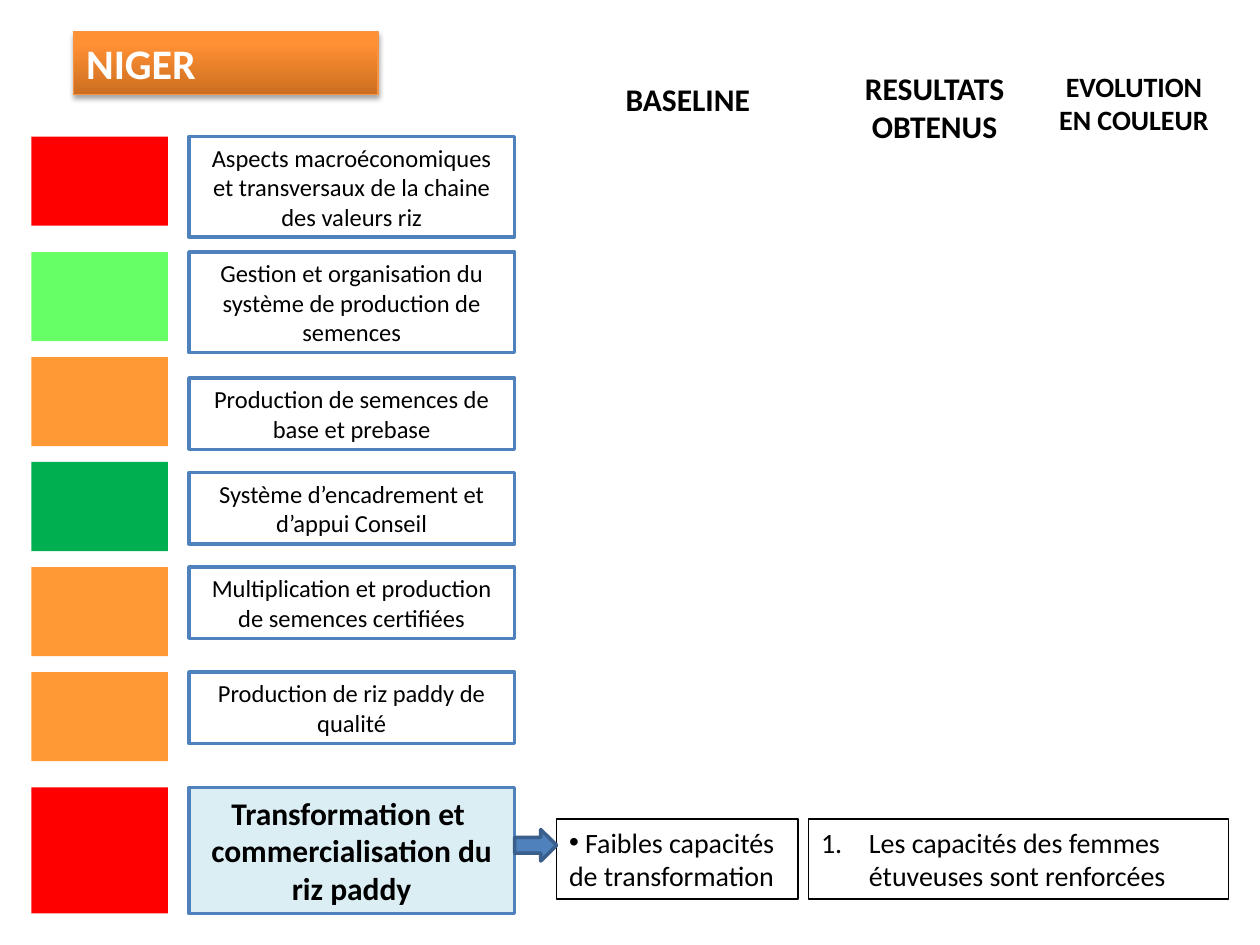
from collections import namedtuple
from dataclasses import dataclass

from lxml import etree
from pptx import Presentation
from pptx.dml.color import RGBColor
from pptx.enum.shapes import MSO_SHAPE
from pptx.enum.text import MSO_ANCHOR, MSO_AUTO_SIZE, PP_ALIGN
from pptx.oxml import parse_xml
from pptx.oxml.ns import nsdecls, qn
from pptx.util import Inches, Pt

RECT, ARROW = MSO_SHAPE.RECTANGLE, MSO_SHAPE.RIGHT_ARROW
LEFT, CENTER = PP_ALIGN.LEFT, PP_ALIGN.CENTER
TOP, MIDDLE = MSO_ANCHOR.TOP, MSO_ANCHOR.MIDDLE
NO_FIT = MSO_AUTO_SIZE.NONE
TWO_CONTENT = 3
CELL = Inches(10) // 120  # the slide is a grid of 120 columns and 90 rows


@dataclass(frozen=True)
class Theme:
    font: str = "Calibri"
    title: int = 24
    strong: int = 18
    detail: int = 16
    topic: int = 14
    ink: str = "000000"
    paper: str = "FFFFFF"
    accent: str = "4F81BD"
    accent_dark: str = "3A5F8C"
    highlight: str = "DBEEF4"
    banner_line: str = "F69240"
    banner_stops: tuple = ((0, "CC6E20"), (80, "FF9034"), (100, "FF9136"))
    red: str = "FF0000"
    orange: str = "FF9933"
    light_green: str = "66FF66"
    green: str = "00B050"


THEME = Theme()
Box = namedtuple("Box", "col row cols rows")
Topic = namedtuple("Topic", "text lines status row drop")

# drop: rows by which the label sits below the top of its status colour
TOPICS = [
    Topic("Aspects macroéconomiques et transversaux de la chaine des valeurs riz",
          3, THEME.red, 13, 0),
    Topic("Gestion et organisation du système de production de semences",
          3, THEME.light_green, 24, 0),
    Topic("Production de semences de base et prebase", 2, THEME.orange, 34, 2),
    Topic("Système d’encadrement et d’appui Conseil", 2, THEME.green, 44, 1),
    Topic("Multiplication et production de semences certifiées",
          2, THEME.orange, 54, 0),
    Topic("Production de riz paddy de qualité", 2, THEME.orange, 64, 0),
]
CURRENT = Topic("Transformation et  commercialisation du riz paddy",
                3, THEME.red, 75, 0)
HEADINGS = [
    ("BASELINE", THEME.strong, 1, 55, 7, 21),
    ("RESULTATS OBTENUS", THEME.strong, 2, 79, 6, 20),
    ("EVOLUTION EN COULEUR", THEME.detail, 2, 99, 6, 18),
]


def rows_for(lines, size):
    """Rows taken by lines of text, with the top and bottom insets."""
    return (Pt(lines * size * 1.2) + Inches(0.1)) / CELL


def place(shape, box):
    shape.left, shape.top, shape.width, shape.height = (
        round(length * CELL) for length in box)


def outline(shape, color, width):
    shape.line.color.rgb = RGBColor.from_string(color)
    shape.line.width = Pt(width)


def write(shape, text, size, color=THEME.ink, bold=False, align=CENTER, anchor=TOP):
    frame = shape.text_frame
    frame.word_wrap = True
    frame.auto_size = NO_FIT
    frame.vertical_anchor = anchor
    paragraph = frame.paragraphs[0]
    paragraph.alignment = align
    paragraph.space_before = Pt(0)
    run = paragraph.add_run()
    run.text = text
    run.font.name = THEME.font
    run.font.size = Pt(size)
    run.font.bold = bold
    run.font.color.rgb = RGBColor.from_string(color)
    return paragraph


def add_block(slide, box, fill, line=None, preset=RECT):
    block = slide.shapes.add_shape(preset, 0, 0, 0, 0)
    place(block, box)
    block.shadow.inherit = False
    block.fill.solid()
    block.fill.fore_color.rgb = RGBColor.from_string(fill)
    if line:
        outline(block, line, 2)
    else:
        block.line.fill.background()
    return block


def fill_banner(title, box):
    """Country name on an orange gradient with a soft shadow."""
    place(title, box)
    stops = "".join(
        f'<a:gs pos="{share * 1000}"><a:srgbClr val="{color}"/></a:gs>'
        for share, color in THEME.banner_stops)
    properties = title.element.spPr
    properties.append(parse_xml(
        f'<a:gradFill {nsdecls("a")} rotWithShape="1"><a:gsLst>{stops}</a:gsLst>'
        '<a:lin ang="16200000" scaled="0"/></a:gradFill>'))
    outline(title, THEME.banner_line, 0.75)
    properties.append(parse_xml(
        f'<a:effectLst {nsdecls("a")}>'
        f'<a:outerShdw blurRad="{Pt(3.1)}" dist="{Pt(1.8)}" dir="5400000" '
        f'rotWithShape="0"><a:srgbClr val="{THEME.ink}"><a:alpha val="35000"/>'
        '</a:srgbClr></a:outerShdw></a:effectLst>'))
    write(title, "NIGER", THEME.title, THEME.paper, True, LEFT, MIDDLE)


def add_topic(slide, topic, box, size=THEME.topic, current=False):
    """Status colour at the left of the box and topic label at its right."""
    label_rows = rows_for(topic.lines, size)
    status_rows = label_rows if current else box.rows
    add_block(slide, Box(box.col, box.row, 13, status_rows), topic.status)
    label = add_block(
        slide, Box(box.col + 15, box.row + topic.drop, box.cols - 15, label_rows),
        THEME.highlight if current else THEME.paper, THEME.accent)
    write(label, topic.text, size, bold=current)


def add_heading(slide, text, size, box):
    heading = slide.shapes.add_textbox(0, 0, 0, 0)
    place(heading, box)
    write(heading, text, size, bold=True)


def fill_list(body, box, text, bullet, indent=0):
    place(body, box)
    outline(body, THEME.ink, 1)
    paragraph = write(body, text, THEME.detail, align=LEFT)
    properties = paragraph._p.get_or_add_pPr()
    properties.set("marL", str(Inches(indent)))
    properties.set("indent", str(-Inches(indent)))
    tag, attribute, value = bullet
    etree.SubElement(properties, qn(tag)).set(attribute, value)


def build():
    deck = Presentation()
    deck.slide_width, deck.slide_height = 120 * CELL, 90 * CELL
    slide = deck.slides.add_slide(deck.slide_layouts[TWO_CONTENT])
    title, baseline, results = slide.placeholders

    fill_banner(title, Box(7, 3, 29, 6))
    for topic in TOPICS:
        add_topic(slide, topic, Box(3, topic.row, 46, 8.5))
    add_topic(slide, CURRENT, Box(3, CURRENT.row, 46, 12), THEME.strong, True)
    add_block(slide, Box(49, 79, 4, 3), THEME.accent, THEME.accent_dark, ARROW)

    for text, size, lines, col, row, cols in HEADINGS:
        add_heading(slide, text, size, Box(col, row, cols, rows_for(lines, size)))

    list_rows = rows_for(2, THEME.detail)
    fill_list(baseline, Box(53, 78, 23, list_rows),
              " Faibles capacités de transformation", ("a:buChar", "char", "•"))
    fill_list(results, Box(77, 78, 40, list_rows),
              "Les capacités des femmes étuveuses sont renforcées",
              ("a:buAutoNum", "type", "arabicPeriod"), 0.38)
    deck.save("out.pptx")


if __name__ == "__main__":
    build()
